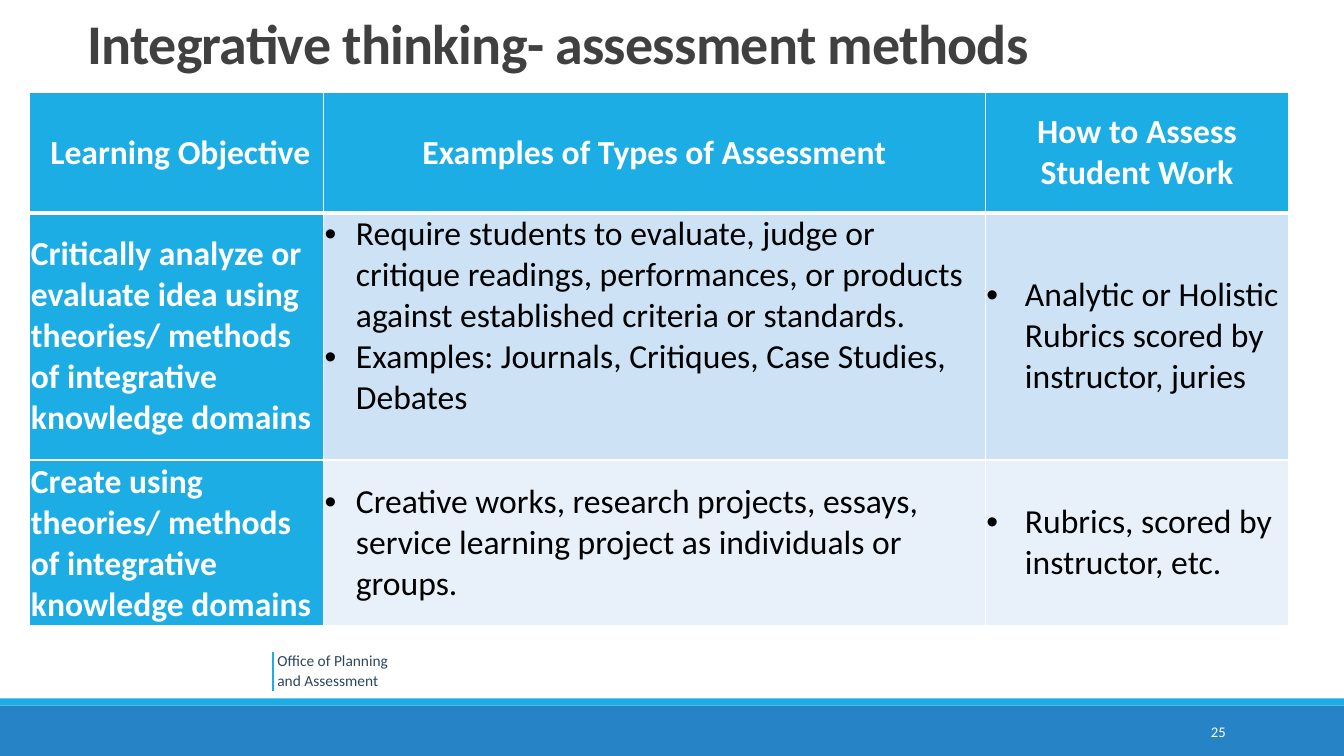
from dataclasses import dataclass

from lxml import etree
from pptx import Presentation
from pptx import util as u
from pptx.dml.color import RGBColor
from pptx.enum import shapes, text
from pptx.oxml import ns


@dataclass(frozen=True)
class Theme:
    font: str = "Calibri"
    white: str = "FFFFFF"
    black: str = "000000"
    title: str = "404040"
    office: str = "2D4660"
    accent: str = "1CADE4"
    footer: str = "2683C6"
    bands: tuple = ("CDE3F5", "E8F1FA")
    title_size: float = 40
    table_size: float = 24
    office_size: float = 11
    number_size: float = 10.5


THEME = Theme()
PAGE_WIDTH, PAGE_HEIGHT = 33.87, 19.05
COLUMN_WIDTHS = (7.4, 16.68, 7.65)
ROW_HEIGHTS = (3.02, 6.23, 4.18)
CELL_INSET = 0.03
OBJECTIVE_HEADER_INSET = 0.22
BULLET_INDENTS = {1: 0.79, 2: 0.97}

HEADERS = ("Learning Objective", "Examples of Types of Assessment",
           "How to Assess Student Work")
OBJECTIVES = (
    (["Critically analyze or evaluate idea using theories/ methods of "
      "integrative knowledge domains"],
     ["Require students to evaluate, judge or critique readings, "
      "performances, or products against established criteria or standards.",
      "Examples: Journals, Critiques, Case Studies, Debates"],
     ["Analytic or Holistic Rubrics scored by instructor, juries"]),
    (["Create using theories/ methods of integrative knowledge domains"],
     ["Creative works, research projects, essays, service learning project "
      "as individuals or groups."],
     ["Rubrics, scored by instructor, etc."]),
)


def apply_format(target, **values):
    for attribute, value in values.items():
        setattr(target, attribute, value)


def fill_with(fill, color):
    fill.solid()
    fill.fore_color.rgb = RGBColor.from_string(color)


def format_text(paragraph, size, color, bold=False):
    for run in paragraph.runs:
        apply_format(run.font, name=THEME.font, size=u.Pt(size), bold=bold)
        run.font.color.rgb = RGBColor.from_string(color)


def add_label(slide, wording, box, size, color, bold=False, inset=0.25,
              anchor=text.MSO_ANCHOR.TOP, **paragraph_format):
    """Add a one-paragraph text box; box is left, top, width, height in cm."""
    frame = slide.shapes.add_textbox(*map(u.Cm, box)).text_frame
    apply_format(frame, word_wrap=True, vertical_anchor=anchor,
                 margin_left=u.Cm(inset), margin_right=u.Cm(inset),
                 margin_top=u.Cm(inset / 2), margin_bottom=u.Cm(inset / 2))
    paragraph = frame.paragraphs[0]
    paragraph.text = wording
    apply_format(paragraph, **paragraph_format)
    format_text(paragraph, size, color, bold)
    return paragraph


def add_band(slide, top, height, color):
    band = slide.shapes.add_shape(shapes.MSO_SHAPE.RECTANGLE, 0, u.Cm(top),
                                  u.Cm(PAGE_WIDTH), u.Cm(height))
    band.shadow.inherit = False
    fill_with(band.fill, color)
    band.line.fill.background()


def add_rule(slide, left, top, bottom):
    rule = slide.shapes.add_connector(shapes.MSO_CONNECTOR.STRAIGHT, u.Cm(left),
                                      u.Cm(top), u.Cm(left), u.Cm(bottom))
    rule.line.width = u.Pt(1)
    rule.line.color.rgb = RGBColor.from_string(THEME.accent)
    etree.SubElement(rule._element.spPr, ns.qn("a:effectLst"))


def add_bullet(paragraph, indent):
    properties = paragraph._p.get_or_add_pPr()
    properties.set("marL", str(u.Cm(indent)))
    properties.set("indent", str(-u.Cm(indent)))
    etree.SubElement(properties, ns.qn("a:buFont"), typeface="Arial")
    etree.SubElement(properties, ns.qn("a:buChar"), char="•")


def set_borders(cell, **widths):
    """Draw white borders; widths are points, keyed by side in schema order."""
    properties = cell._tc.get_or_add_tcPr()
    for side, width in widths.items():
        border = etree.SubElement(properties, ns.qn(f"a:ln{side}"),
                                  w=str(u.Pt(width)))
        solid = etree.SubElement(border, ns.qn("a:solidFill"))
        etree.SubElement(solid, ns.qn("a:srgbClr"), val=THEME.white)


def fill_cell(cell, row, column, entries):
    is_header = row == 0
    is_heading = is_header or column == 0
    several = len(entries) > 1
    inset = u.Cm(CELL_INSET)
    apply_format(cell, margin_left=inset, margin_right=inset,
                 margin_top=inset, margin_bottom=inset,
                 vertical_anchor=text.MSO_ANCHOR.TOP if several
                 else text.MSO_ANCHOR.MIDDLE)
    set_borders(cell, L=1, R=1, T=3 if row == 1 else 1, B=3 if is_header else 1)
    fill_with(cell.fill, THEME.accent if is_heading else THEME.bands[row - 1])
    cell.text_frame.text = "\n".join(entries)
    for paragraph in cell.text_frame.paragraphs:
        if is_header:
            paragraph.alignment = text.PP_ALIGN.CENTER
        elif not is_heading:
            add_bullet(paragraph, BULLET_INDENTS[column])
        format_text(paragraph, THEME.table_size,
                    THEME.white if is_heading else THEME.black, is_heading)


def add_assessment_table(slide, left, top):
    rows = [[[header] for header in HEADERS], *OBJECTIVES]
    table = slide.shapes.add_table(
        len(rows), len(HEADERS), u.Cm(left), u.Cm(top),
        u.Cm(sum(COLUMN_WIDTHS)), u.Cm(sum(ROW_HEIGHTS))).table
    for column, width in zip(table.columns, COLUMN_WIDTHS):
        column.width = u.Cm(width)
    for row, height in zip(table.rows, ROW_HEIGHTS):
        row.height = u.Cm(height)
    for row, cells in enumerate(rows):
        for column, entries in enumerate(cells):
            fill_cell(table.cell(row, column), row, column, entries)
    table.cell(0, 0).margin_left = u.Cm(OBJECTIVE_HEADER_INSET)


def main():
    deck = Presentation()
    apply_format(deck, slide_width=u.Cm(PAGE_WIDTH),
                 slide_height=u.Cm(PAGE_HEIGHT))
    slide = deck.slides.add_slide(deck.slide_layouts[6])
    add_band(slide, 17.78, 1.27, THEME.footer)
    add_band(slide, 17.6, 0.18, THEME.accent)
    add_label(slide, "Office of Planning\vand Assessment",
              (6.99, 16.38, 6.5, 1.02), THEME.office_size, THEME.office,
              inset=0, line_spacing=1.07)
    add_rule(slide, 6.88, 16.43, 17.42)
    title = add_label(slide, "Integrative thinking- assessment methods",
                      (1.96, 0, 27.94, 2.05), THEME.title_size, THEME.title,
                      bold=True, anchor=text.MSO_ANCHOR.BOTTOM,
                      line_spacing=0.85)
    title.runs[0].font._element.set("spc", "-50")
    add_assessment_table(slide, 0.75, 2.34)
    add_label(slide, "25", (27.51, 17.93, 3.63, 1.02), THEME.number_size,
              THEME.white, anchor=text.MSO_ANCHOR.MIDDLE,
              alignment=text.PP_ALIGN.RIGHT)
    deck.save("out.pptx")


if __name__ == "__main__":
    main()
